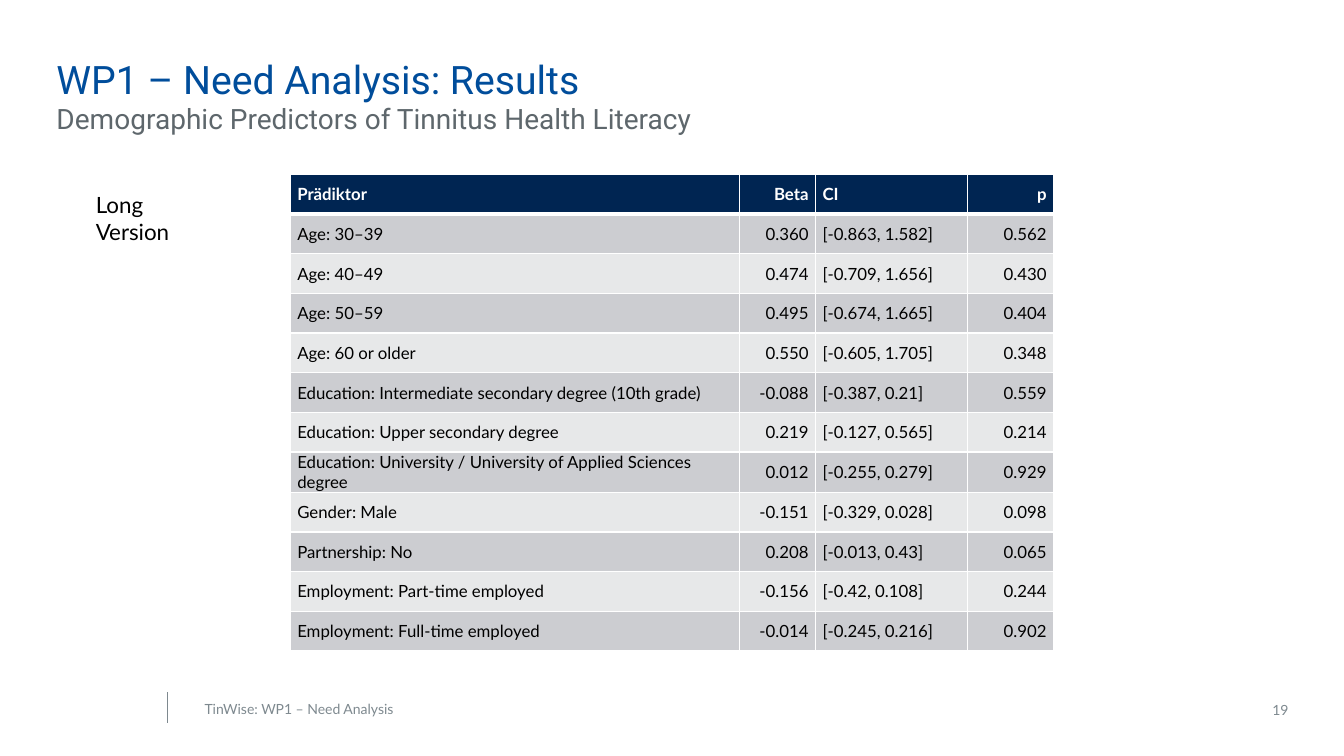
from dataclasses import dataclass
from typing import NamedTuple

from lxml.etree import SubElement
from pptx import Presentation
from pptx.dml.color import RGBColor
from pptx.enum.shapes import MSO_CONNECTOR
from pptx.enum.text import MSO_ANCHOR, PP_ALIGN
from pptx.oxml.ns import qn
from pptx.util import Inches, Pt

SLIDE_W, SLIDE_H = Inches(13.33), Inches(7.5)
NAVY, BLUE, GREY, SLATE = "002552", "004D9B", "7E898F", "5E676C"
WHITE, BLACK = "FFFFFF", "000000"
BANDS = ("CCCDD1", "E7E8E9")
CELL_INDENT = Pt(5)


@dataclass(frozen=True)
class Label:
    text: str
    left: float
    top: float
    width: float
    height: float
    size: int
    color: str
    font: str = "Lato"
    align: PP_ALIGN = PP_ALIGN.LEFT
    anchor: MSO_ANCHOR = MSO_ANCHOR.TOP
    inset: bool = False
    space_after: int = 0


class Column(NamedTuple):
    width: float
    align: PP_ALIGN


class Result(NamedTuple):
    predictor: str
    beta: str
    ci: str
    p: str


LABELS = (
    Label("WP1 – Need Analysis: Results", 4.2, 7.33, 74.95, 5.87, 28, BLUE, "Roboto"),
    Label("Demographic Predictors of Tinnitus Health Literacy",
          4.2, 13.47, 74.95, 3.6, 20, SLATE, "Roboto", space_after=12),
    Label("19", 73.37, 92, 22.5, 3.73, 10, GREY,
          align=PP_ALIGN.RIGHT, anchor=MSO_ANCHOR.MIDDLE),
    Label("TinWise: WP1 – Need Analysis", 14.48, 92, 33.76, 3.73, 10, GREY, inset=True),
    Label("Long Version", 7.13, 25.33, 8.85, 3.6, 16, BLACK, space_after=12),
)

COLUMNS = (
    Column(33.43, PP_ALIGN.LEFT),
    Column(5.66, PP_ALIGN.RIGHT),
    Column(11.33, PP_ALIGN.LEFT),
    Column(6.38, PP_ALIGN.RIGHT),
)

RESULTS = (
    Result("Prädiktor", "Beta", "CI", "p"),
    Result("Age: 30–39", "0.360", "[-0.863, 1.582]", "0.562"),
    Result("Age: 40–49", "0.474", "[-0.709, 1.656]", "0.430"),
    Result("Age: 50–59", "0.495", "[-0.674, 1.665]", "0.404"),
    Result("Age: 60 or older", "0.550", "[-0.605, 1.705]", "0.348"),
    Result("Education: Intermediate secondary degree (10th grade)",
           "-0.088", "[-0.387, 0.21]", "0.559"),
    Result("Education: Upper secondary degree", "0.219", "[-0.127, 0.565]", "0.214"),
    Result("Education: University / University of Applied Sciences degree",
           "0.012", "[-0.255, 0.279]", "0.929"),
    Result("Gender: Male", "-0.151", "[-0.329, 0.028]", "0.098"),
    Result("Partnership: No", "0.208", "[-0.013, 0.43]", "0.065"),
    Result("Employment: Part-time employed", "-0.156", "[-0.42, 0.108]", "0.244"),
    Result("Employment: Full-time employed", "-0.014", "[-0.245, 0.216]", "0.902"),
)


def across(percent: float) -> int:
    return round(SLIDE_W * percent / 100)


def down(percent: float) -> int:
    return round(SLIDE_H * percent / 100)


def rgb(color: str) -> RGBColor:
    return RGBColor.from_string(color)


def style_run(p, font: str, size: int, color: str, bold: bool = False) -> None:
    r = p.runs[0]
    r.font.name = font
    r.font.size = Pt(size)
    r.font.bold = bold
    r.font.color.rgb = rgb(color)


def add_label(slide, label: Label) -> None:
    sp = slide.shapes.add_textbox(across(label.left), down(label.top),
                                  across(label.width), down(label.height))
    tf = sp.text_frame
    tf.word_wrap = True
    tf.vertical_anchor = label.anchor
    if not label.inset:
        tf.margin_left = tf.margin_top = tf.margin_right = tf.margin_bottom = 0
    tf.text = label.text
    p = tf.paragraphs[0]
    p.alignment = label.align
    p.space_after = Pt(label.space_after)
    style_run(p, label.font, label.size, label.color)


def add_footer_rule(slide) -> None:
    rule = slide.shapes.add_connector(MSO_CONNECTOR.STRAIGHT, across(12.45), down(91.6),
                                      across(12.45), down(95.6))
    rule.line.color.rgb = rgb(GREY)
    rule.line.width = Pt(1)
    SubElement(rule.element.spPr, qn("a:effectLst"))


def add_borders(cell, top: int, bottom: int) -> None:
    tcPr = cell._tc.get_or_add_tcPr()
    for side, width in (("L", 1), ("R", 1), ("T", top), ("B", bottom)):
        ln = SubElement(tcPr, qn(f"a:ln{side}"), w=str(Pt(width)))
        fill = SubElement(ln, qn("a:solidFill"))
        SubElement(fill, qn("a:srgbClr"), val=WHITE)


def fill_cell(cell, text: str, row: int, align: PP_ALIGN) -> None:
    header = row == 0
    cell.margin_left = cell.margin_top = cell.margin_right = cell.margin_bottom = 0
    cell.vertical_anchor = MSO_ANCHOR.MIDDLE
    add_borders(cell, 3 if row == 1 else 1, 3 if header else 1)
    cell.fill.solid()
    cell.fill.fore_color.rgb = rgb(NAVY if header else BANDS[(row - 1) % 2])
    cell.text_frame.text = text
    p = cell.text_frame.paragraphs[0]
    p.alignment = align
    p.space_after = Pt(5)
    pPr = p._p.get_or_add_pPr()
    for side in ("marL", "marR"):
        pPr.set(side, str(CELL_INDENT))
    pPr.set("indent", "0")
    style_run(p, "Lato", 12, WHITE if header else BLACK, header)


def add_results(slide) -> None:
    width = sum(column.width for column in COLUMNS)
    frame = slide.shapes.add_table(len(RESULTS), len(COLUMNS), across(21.6), down(23.07),
                                   across(width), down(62.93))
    table = frame.table
    table.horz_banding = False
    for col, column in enumerate(COLUMNS):
        table.columns[col].width = across(column.width)
        for row, result in enumerate(RESULTS):
            fill_cell(table.cell(row, col), result[col], row, column.align)


def main() -> None:
    prs = Presentation()
    prs.slide_width, prs.slide_height = SLIDE_W, SLIDE_H
    slide = prs.slides.add_slide(prs.slide_layouts[6])
    add_footer_rule(slide)
    for label in LABELS:
        add_label(slide, label)
    add_results(slide)
    prs.save("out.pptx")


if __name__ == "__main__":
    main()
